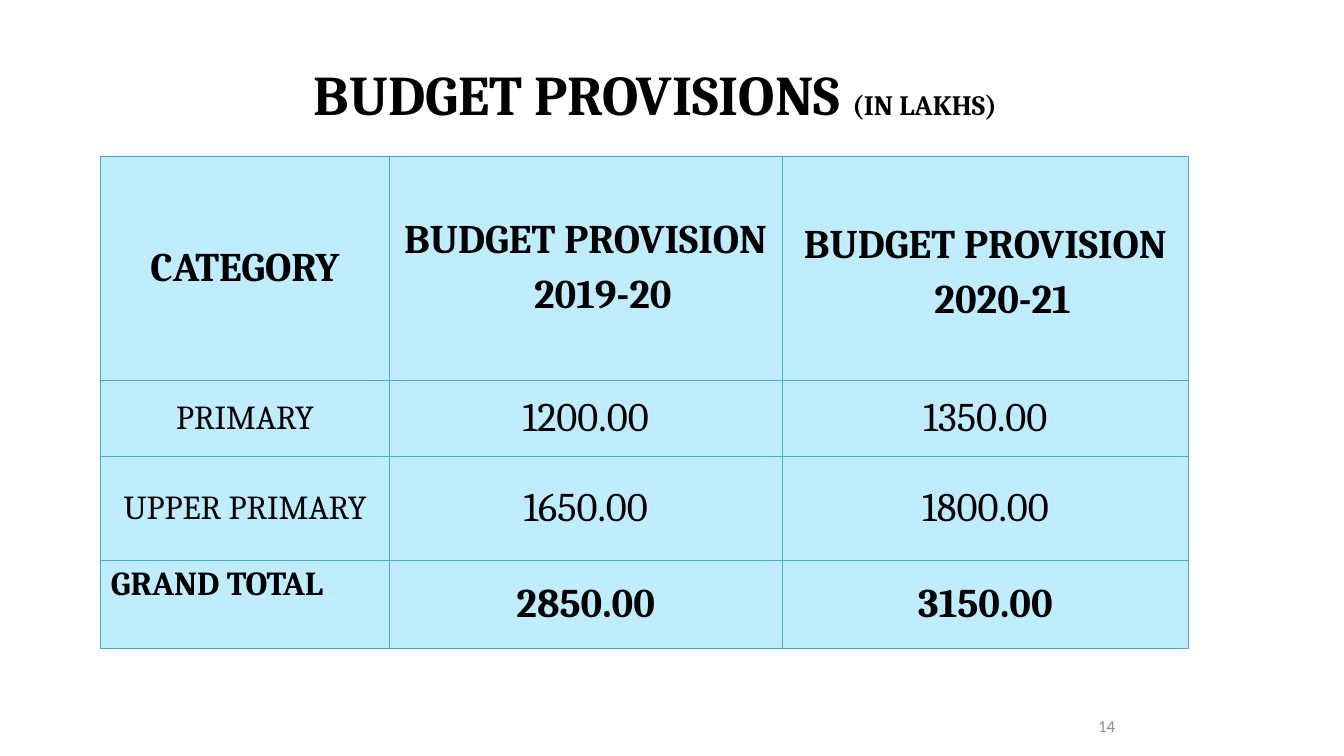
from pptx import Presentation
from pptx.dml.color import RGBColor
from pptx.enum.text import MSO_ANCHOR, PP_ALIGN
from pptx.oxml.ns import qn
from pptx.util import Inches, Pt
from lxml.etree import SubElement

BLACK = RGBColor(0x00, 0x00, 0x00)
GREY = RGBColor(0x8C, 0x8C, 0x8C)
PALE_BLUE = RGBColor(0xBF, 0xEC, 0xFF)
TEAL = RGBColor(0x46, 0xAA, 0xC5)

COLUMNS = (2.86, 3.9, 4.03)
ROWS = (2.22, 0.76, 1.03, 0.87)
BUDGET = (
    ("CATEGORY", "BUDGET PROVISION\n2019-20", "BUDGET PROVISION\n2020-21"),
    ("PRIMARY", "1200.00", "1350.00"),
    ("UPPER PRIMARY", "1650.00", "1800.00"),
    ("GRAND TOTAL", "2850.00", "3150.00"),
)


def style(p, size, name="Cambria", color=BLACK, bold=False, align=PP_ALIGN.CENTER):
    """Set the alignment and font of a paragraph."""
    p.alignment = align
    p.font.size = Pt(size)
    p.font.name = name
    p.font.color.rgb = color
    p.font.bold = bold


def add_box(s, left, top, width, height):
    """Add a wrapping, vertically centred text box and return its first paragraph."""
    tf = s.shapes.add_textbox(*map(Inches, (left, top, width, height))).text_frame
    tf.word_wrap = True
    tf.vertical_anchor = MSO_ANCHOR.MIDDLE
    return tf.paragraphs[0]


def add_title(s, left, top, width, height):
    """Write the slide title with its smaller unit note."""
    p = add_box(s, left, top, width, height)
    style(p, 40, bold=True)
    p.add_run().text = "BUDGET PROVISIONS "
    r = p.add_run()
    r.text = "(IN LAKHS)"
    r.font.size = Pt(20)


def add_number(s, left, top, width, height):
    """Write the slide number."""
    p = add_box(s, left, top, width, height)
    p.add_run().text = "14"
    style(p, 12, "Calibri", GREY, align=PP_ALIGN.RIGHT)


def add_borders(cell):
    """Draw a thin teal line on all four sides of a cell."""
    props = cell._tc.get_or_add_tcPr()
    for i, side in enumerate(("lnL", "lnR", "lnT", "lnB")):
        line = props.makeelement(qn(f"a:{side}"), {"w": str(Pt(0.75))})
        fill = SubElement(line, qn("a:solidFill"))
        SubElement(fill, qn("a:srgbClr"), val=str(TEAL))
        props.insert(i, line)


def fill_cell(cell, text, size, bold):
    """Colour a cell and write its centred lines, indenting the second."""
    cell.fill.solid()
    cell.fill.fore_color.rgb = PALE_BLUE
    add_borders(cell)
    cell.vertical_anchor = MSO_ANCHOR.MIDDLE
    cell.text = text
    for i, p in enumerate(cell.text_frame.paragraphs):
        if i:
            p.space_before = Pt(size * 0.2)
            p._p.get_or_add_pPr().set("marL", str(Inches(0.34)))
        style(p, size, bold=bold)


def add_budget_table(s, left, top, width, height):
    """Build the budget table, sharing the box among its columns and rows."""
    table = s.shapes.add_table(len(ROWS), len(COLUMNS),
                               *map(Inches, (left, top, width, height))).table
    table.first_row = table.horz_banding = False
    for column, share in zip(table.columns, COLUMNS):
        column.width = Inches(width * share / sum(COLUMNS))
    last = len(ROWS) - 1
    for i, (row, share, texts) in enumerate(zip(table.rows, ROWS, BUDGET)):
        row.height = Inches(height * share / sum(ROWS))
        for j, text in enumerate(texts):
            size = 24 if i and not j else 29
            fill_cell(table.cell(i, j), text, size, i in (0, last))
    table.cell(0, 2).margin_top = Inches(0.15)
    total = table.cell(last, 0)
    total.vertical_anchor = MSO_ANCHOR.TOP
    total.text_frame.paragraphs[0].alignment = PP_ALIGN.LEFT


def main():
    """Build the budget slide and save it."""
    prs = Presentation()
    prs.slide_width, prs.slide_height = Inches(13.33), Inches(7.5)
    s = prs.slides.add_slide(prs.slide_layouts[6])
    add_budget_table(s, 1, 1.55, sum(COLUMNS), sum(ROWS))
    add_number(s, 8.83, 6.94, 2.33, 0.52)
    add_title(s, 1, 0.3, 11, 1.25)
    prs.save("out.pptx")


if __name__ == "__main__":
    main()
